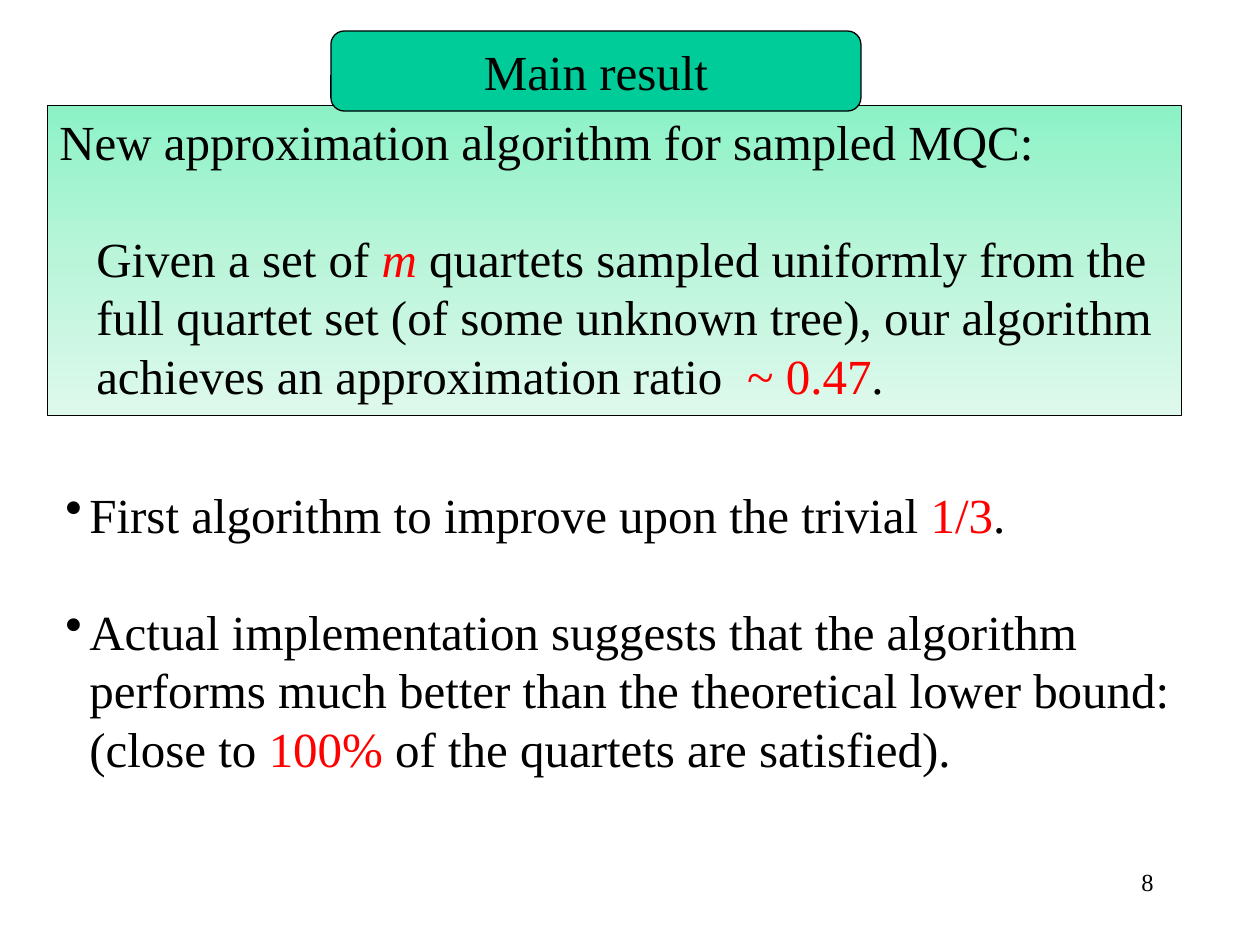
from copy import deepcopy
from lxml.etree import SubElement
from pptx import Presentation
from pptx.dml.color import RGBColor
from pptx.enum.shapes import MSO_SHAPE
from pptx.enum.text import MSO_ANCHOR, PP_ALIGN
from pptx.oxml.ns import qn
from pptx.util import Pt

EMU_PER_PX = 914400 // 126
FONT = "Times New Roman"
BODY_SIZE = 28
LINE_PITCH = 33.5
COLORS = {"black": "000000", "red": "FF0000", "green": "00CC99"}
GRADIENT = [(0, "8CF2C6"), (0.5, "BAF5DA"), (1, "DEF9EC")]

TITLE = [("Main result", "black", False)]
RESULT_HEADING = [("New approximation algorithm for sampled MQC:", "black", False)]
RESULT = [
    ("Given a set of ", "black", False),
    ("m", "red", True),
    (" quartets sampled uniformly from the full quartet set (of some unknown tree), "
     "our algorithm achieves an approximation ratio  ", "black", False),
    ("~ 0.47", "red", False),
    (".", "black", False),
]
REMARKS = [
    [
        ("First algorithm to improve upon the trivial ", "black", False),
        ("1/3", "red", False),
        (".", "black", False),
    ],
    [
        ("Actual implementation suggests that the algorithm performs much better "
         "than the theoretical lower bound: (close to ", "black", False),
        ("100% ", "red", False),
        ("of the quartets are satisfied).", "black", False),
    ],
]
SLIDE_NUMBER = [("8", "black", False)]

BOXES = {
    "number": (904, 861, 262, 63),
    "result": (47, 105, 1134, 310),
    "title": (331, 31, 530, 80),
    "remarks": (53, 478, 1129, 310),
}


def px(value):
    return round(value * EMU_PER_PX)


def color(name):
    return RGBColor.from_string(COLORS[name])


def write(paragraph, runs, size=BODY_SIZE, align=PP_ALIGN.LEFT, pitch=LINE_PITCH,
          before=0, left=0, hanging=0, bullet=None):
    paragraph.alignment = align
    paragraph.space_before = Pt(before)
    if pitch:
        paragraph.line_spacing = Pt(pitch)
    properties = paragraph._p.get_or_add_pPr()
    properties.set("marL", str(px(left)))
    properties.set("indent", str(px(-hanging)))
    if bullet:
        SubElement(properties, qn("a:buChar")).set("char", bullet)
    for text, tone, italic in runs:
        run = paragraph.add_run()
        run.text = text
        run.font.name = FONT
        run.font.size = Pt(size)
        run.font.italic = italic
        run.font.color.rgb = color(tone)


def add_panel(slide, kind, box, line_width, anchor):
    shape = slide.shapes.add_shape(kind, *map(px, box))
    shape.shadow.inherit = False
    shape.line.color.rgb = color("black")
    shape.line.width = Pt(line_width)
    shape.text_frame.word_wrap = True
    shape.text_frame.vertical_anchor = anchor
    return shape


def add_text(slide, box):
    frame = slide.shapes.add_textbox(*map(px, box)).text_frame
    frame.word_wrap = True
    return frame


def fill_gradient(shape, stops):
    shape.fill.gradient()
    shape.fill.gradient_angle = 270
    stop_list = shape.fill._fill._gradFill.find(qn("a:gsLst"))
    stop_list.append(deepcopy(stop_list[-1]))
    for stop, (position, tone) in zip(shape.fill.gradient_stops, stops):
        stop.position = position
        stop.color.rgb = RGBColor.from_string(tone)


def main():
    presentation = Presentation()
    presentation.slide_width = px(1260)
    presentation.slide_height = px(945)
    slide = presentation.slides.add_slide(presentation.slide_layouts[6])

    number = add_text(slide, BOXES["number"])
    write(number.paragraphs[0], SLIDE_NUMBER, size=14, align=PP_ALIGN.RIGHT, pitch=None)

    result = add_panel(slide, MSO_SHAPE.RECTANGLE, BOXES["result"], 0.25, MSO_ANCHOR.TOP)
    fill_gradient(result, GRADIENT)
    write(result.text_frame.paragraphs[0], RESULT_HEADING)
    write(result.text_frame.add_paragraph(), RESULT, before=LINE_PITCH, left=37)

    title = add_panel(slide, MSO_SHAPE.ROUNDED_RECTANGLE, BOXES["title"], 0.75, MSO_ANCHOR.MIDDLE)
    title.fill.solid()
    title.fill.fore_color.rgb = color("green")
    write(title.text_frame.paragraphs[0], TITLE, align=PP_ALIGN.CENTER)

    remarks = add_text(slide, BOXES["remarks"])
    for index, runs in enumerate(REMARKS):
        paragraph = remarks.add_paragraph() if index else remarks.paragraphs[0]
        write(paragraph, runs, before=LINE_PITCH * index, left=24, hanging=24, bullet="•")

    presentation.save("out.pptx")


if __name__ == "__main__":
    main()
